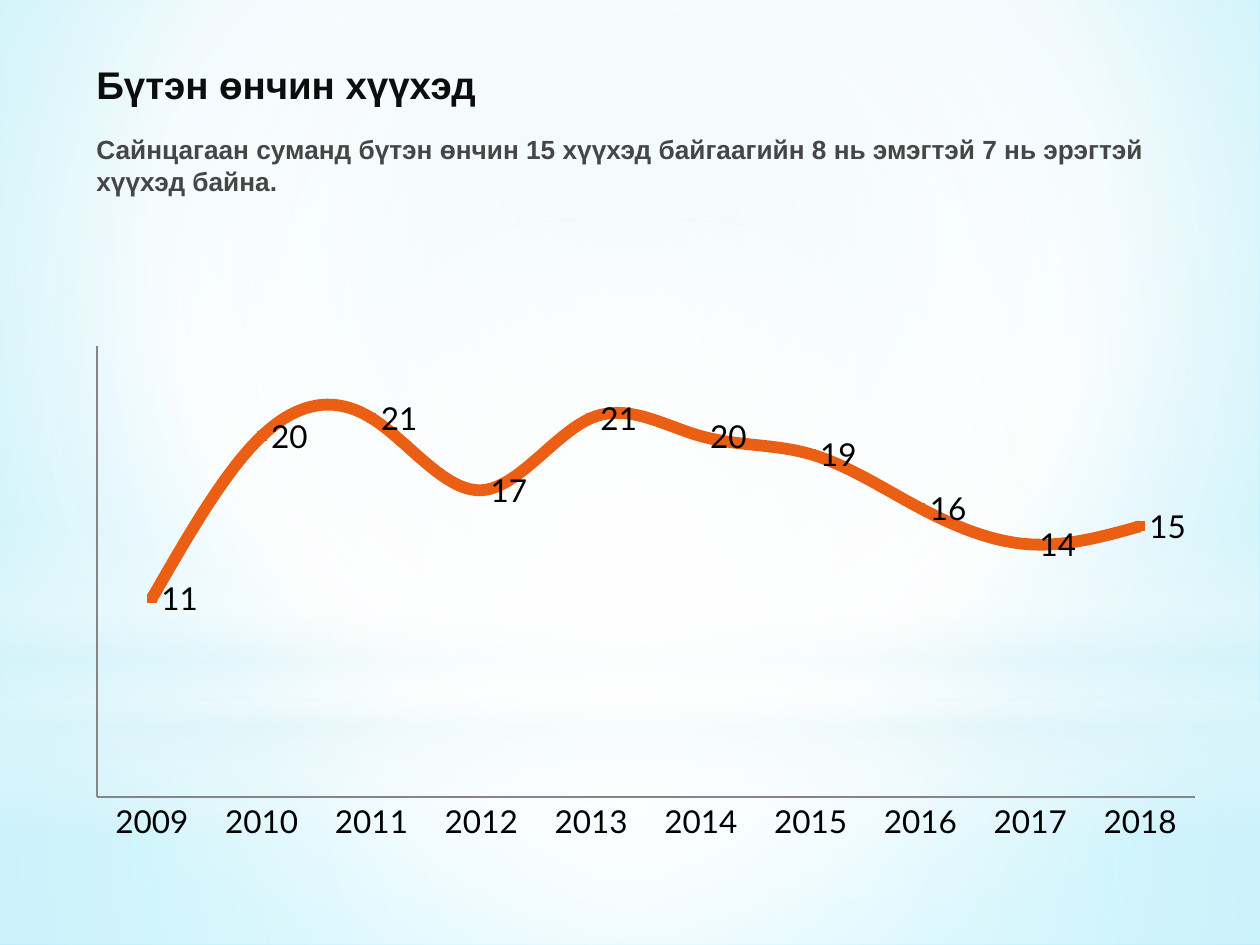
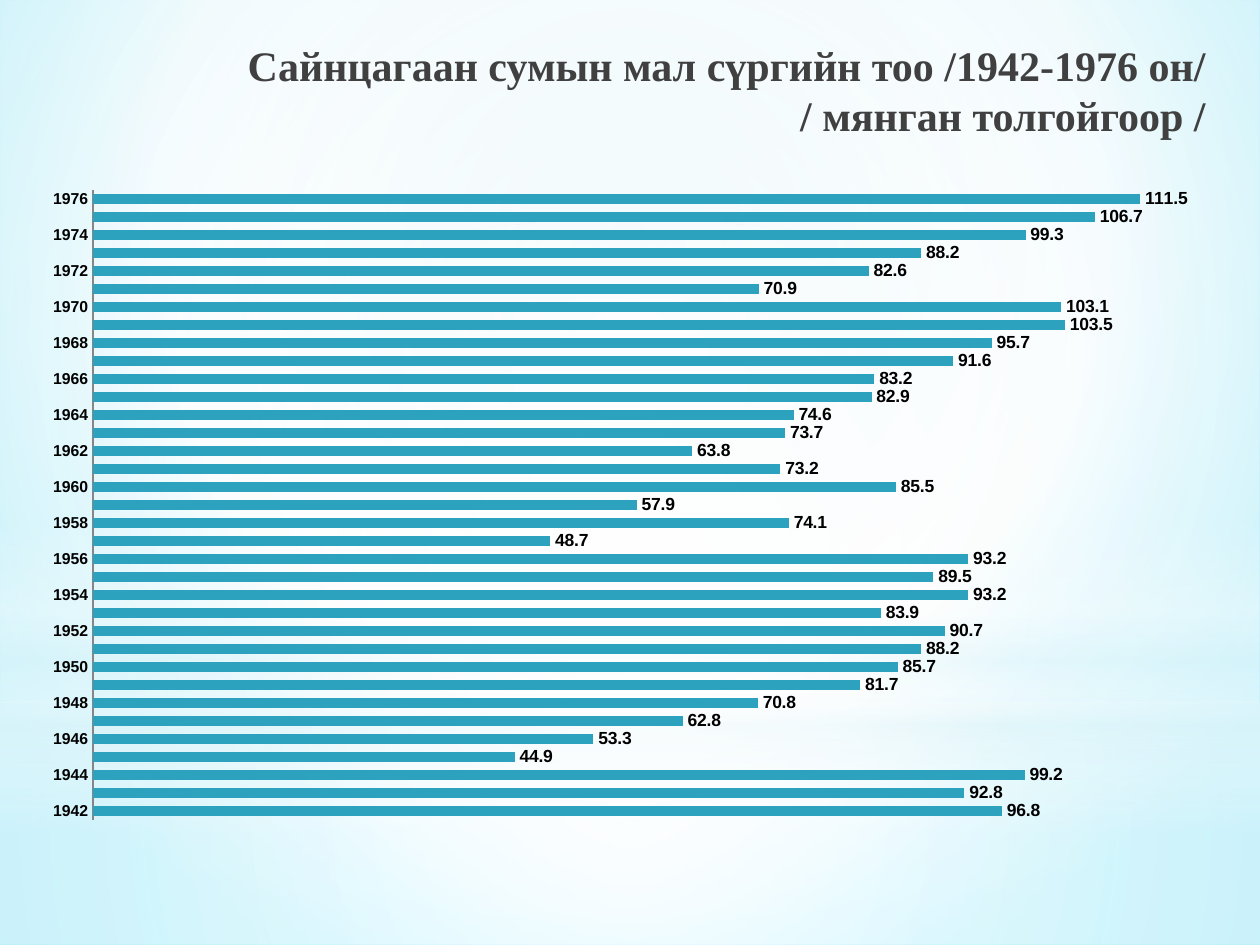
from pptx import Presentation
from pptx.chart.data import CategoryChartData
from pptx.dml.color import RGBColor
from pptx.enum.chart import XL_CHART_TYPE, XL_LABEL_POSITION, XL_MARKER_STYLE
from pptx.enum.chart import XL_TICK_LABEL_POSITION, XL_TICK_MARK
from pptx.enum.shapes import MSO_SHAPE
from pptx.enum.text import MSO_ANCHOR, PP_ALIGN
from pptx.oxml import parse_xml
from pptx.oxml.ns import nsdecls, qn
from pptx.util import Emu, Pt

# Content
ORPHANS_TITLE = "Бүтэн өнчин хүүхэд"
ORPHANS_TEXT = ("Сайнцагаан суманд бүтэн өнчин 15 хүүхэд байгаагийн "
                "8 нь эмэгтэй 7 нь эрэгтэй хүүхэд байна.")
ORPHANS_FIRST_YEAR = 2009
ORPHANS = [11, 20, 21, 17, 21, 20, 19, 16, 14, 15]

HERD_TITLE = ["Сайнцагаан сумын мал сүргийн тоо /1942-1976 он/",
              "/ мянган толгойгоор /"]
HERD_FIRST_YEAR = 1942
HERD = [96.8, 92.8, 99.2, 44.9, 53.3, 62.8, 70.8, 81.7, 85.7, 88.2, 90.7, 83.9,
        93.2, 89.5, 93.2, 48.7, 74.1, 57.9, 85.5, 73.2, 63.8, 73.7, 74.6, 82.9,
        83.2, 91.6, 95.7, 103.5, 103.1, 70.9, 82.6, 88.2, 99.3, 106.7, 111.5]

# Shared look: lengths in px, gradient stops as (position, colour, opacity)
SLIDE_SIZE = (1260, 945)
BLACK, NEAR_BLACK, DARK_GREY, TITLE_GREY = "000000", "0D0D0D", "464646", "404040"
AXIS_GREY, TEAL, ORANGE = "868686", "2DA2BF", "EB5F15"
WHITE, PALE = "FFFFFF", "DEF5FA"
CENTRE = (50, 50, 50, 50)
BACKGROUND_STOPS = [(0, "CDEFF7", 100), (60, WHITE, 100), (100, "7CE7FF", 100)]
BACKGROUND_FOCUS = (20, 10, 20, 60)
BACKDROP = [
    (MSO_SHAPE.RECTANGLE, (0, 703, 1260, 242),
     [(0, WHITE, 91), (37, WHITE, 76), (100, PALE, 79)], CENTRE),
    (MSO_SHAPE.RECTANGLE, (0, 0, 1260, 703),
     [(0, WHITE, 89), (48, WHITE, 62), (100, PALE, 79)], CENTRE),
    (MSO_SHAPE.RECTANGLE, (0, 519, 1260, 315),
     [(0, WHITE, 0), (29, WHITE, 30), (45, PALE, 40), (55, WHITE, 26),
      (65, PALE, 60), (100, WHITE, 0)], None),
    (MSO_SHAPE.OVAL, (0, 220, 1260, 703),
     [(0, WHITE, 100), (56, WHITE, 0)], CENTRE),
]


def px(length):
    return Emu(round(length * 914400 / 126))


def color(hex_string):
    return RGBColor.from_string(hex_string)


def set_gradient(parent, stops, focus):
    """Swap the solid fill of parent for a radial or, without focus, vertical gradient."""
    stop_xml = "".join(
        f'<a:gs pos="{position * 1000}"><a:srgbClr val="{tone}">'
        f'<a:alpha val="{opacity * 1000}"/></a:srgbClr></a:gs>'
        for position, tone, opacity in stops)
    if focus:
        left, top, right, bottom = (1000 * side for side in focus)
        direction = (f'<a:path path="circle"><a:fillToRect l="{left}" t="{top}" '
                     f'r="{right}" b="{bottom}"/></a:path>')
    else:
        direction = '<a:lin ang="5400000" scaled="0"/>'
    gradient = parse_xml(f'<a:gradFill {nsdecls("a")} rotWithShape="1">'
                         f'<a:gsLst>{stop_xml}</a:gsLst>{direction}</a:gradFill>')
    parent.replace(parent.find(qn("a:solidFill")), gradient)


def set_background(master):
    master.background.fill.solid()
    properties = master.element.find(".//" + qn("p:bgPr"))
    set_gradient(properties, BACKGROUND_STOPS, BACKGROUND_FOCUS)


def add_slide(presentation):
    slide = presentation.slides.add_slide(presentation.slide_layouts[6])
    for kind, box, stops, focus in BACKDROP:
        shape = slide.shapes.add_shape(kind, *map(px, box))
        shape.shadow.inherit = False
        shape.line.fill.background()
        shape.fill.solid()
        set_gradient(shape.element.spPr, stops, focus)
    return slide


def set_font(font, name, size, tone, bold=False):
    font.name, font.size, font.bold = name, Pt(size), bold
    font.color.rgb = color(tone)


def add_text_frame(slide, box, anchor):
    frame = slide.shapes.add_textbox(*map(px, box)).text_frame
    frame.word_wrap = True
    frame.vertical_anchor = anchor
    return frame


def add_run(paragraph, text, *font):
    run = paragraph.add_run()
    run.text = text
    set_font(run.font, *font)


def add_year_chart(slide, kind, box, plot, first_year, values, maximum):
    """Add a one-series chart whose inner plot area has the given box on the slide."""
    data = CategoryChartData()
    data.categories = [str(first_year + index) for index in range(len(values))]
    data.add_series("Series 1", values)
    chart = slide.shapes.add_chart(kind, *map(px, box), data).chart
    chart.has_legend = chart.has_title = False
    set_font(chart.font, "Lato", 18, BLACK)

    left, top, width, height = box
    fractions = {"x": (plot[0] - left) / width, "y": (plot[1] - top) / height,
                 "w": plot[2] / width, "h": plot[3] / height}
    modes = '<c:layoutTarget val="inner"/><c:xMode val="edge"/><c:yMode val="edge"/>'
    sizes = "".join(f'<c:{key} val="{value:.4f}"/>' for key, value in fractions.items())
    plot_area = chart.element.find(".//" + qn("c:plotArea"))
    for layout in plot_area.findall(qn("c:layout")):
        plot_area.remove(layout)
    plot_area.insert(0, parse_xml(f'<c:layout {nsdecls("c")}><c:manualLayout>'
                                  f'{modes}{sizes}</c:manualLayout></c:layout>'))

    for axis in (chart.category_axis, chart.value_axis):
        axis.major_tick_mark = axis.minor_tick_mark = XL_TICK_MARK.NONE
        axis.has_major_gridlines = False
        axis.format.line.color.rgb = color(AXIS_GREY)
        axis.format.line.width = Pt(0.75)
    chart.value_axis.minimum_scale = 0
    chart.value_axis.maximum_scale = maximum
    chart.value_axis.tick_label_position = XL_TICK_LABEL_POSITION.NONE
    chart.plots[0].vary_by_categories = False
    return chart


def show_values(chart, position, *font):
    plot = chart.plots[0]
    plot.has_data_labels = True
    plot.data_labels.show_value = True
    plot.data_labels.position = position
    set_font(plot.data_labels.font, *font)


def build_orphans_slide(presentation):
    slide = add_slide(presentation)

    # Smooth line with values to the right of each point
    chart = add_year_chart(slide, XL_CHART_TYPE.LINE_MARKERS, (73, 336, 1144, 514),
                           (97, 346, 1098, 451), ORPHANS_FIRST_YEAR, ORPHANS, 25)
    show_values(chart, XL_LABEL_POSITION.RIGHT, "Lato", 18, BLACK)
    series = chart.plots[0].series[0]
    series.smooth = True
    series.format.line.color.rgb = color(ORANGE)
    series.format.line.width = Pt(6.75)
    series.marker.style = XL_MARKER_STYLE.SQUARE
    series.marker.size = 5
    series.marker.format.fill.solid()
    series.marker.format.fill.fore_color.rgb = color(ORANGE)
    series.marker.format.line.fill.background()

    # Heading and summary
    frame = add_text_frame(slide, (84, 55, 1124, 210), MSO_ANCHOR.TOP)
    heading = frame.paragraphs[0]
    heading.space_after = Pt(15)
    add_run(heading, ORPHANS_TITLE, "Arial", 22, NEAR_BLACK, True)
    add_run(frame.add_paragraph(), ORPHANS_TEXT, "Arial", 15, DARK_GREY, True)


def build_herd_slide(presentation):
    slide = add_slide(presentation)

    # Right-aligned title
    frame = add_text_frame(slide, (84, 32, 1134, 116), MSO_ANCHOR.MIDDLE)
    title = frame.paragraphs[0]
    title.alignment = PP_ALIGN.RIGHT
    for index, line in enumerate(HERD_TITLE):
        if index:
            title.add_line_break()
        add_run(title, line, "Times New Roman", 24, TITLE_GREY, True)

    # One bar per year
    chart = add_year_chart(slide, XL_CHART_TYPE.BAR_CLUSTERED, (53, 189, 1187, 693),
                           (92, 190, 1128, 630), HERD_FIRST_YEAR, HERD, 120)
    show_values(chart, XL_LABEL_POSITION.OUTSIDE_END, "Arial", 10, BLACK, True)
    set_font(chart.category_axis.tick_labels.font, "Arial", 9, BLACK, True)
    chart.value_axis.visible = False
    plot = chart.plots[0]
    plot.gap_width = 75
    fill = plot.series[0].format.fill
    fill.solid()
    fill.fore_color.rgb = color(TEAL)


def main():
    presentation = Presentation()
    presentation.slide_width, presentation.slide_height = map(px, SLIDE_SIZE)
    set_background(presentation.slide_master)
    build_orphans_slide(presentation)
    build_herd_slide(presentation)
    presentation.save("out.pptx")


if __name__ == "__main__":
    main()
